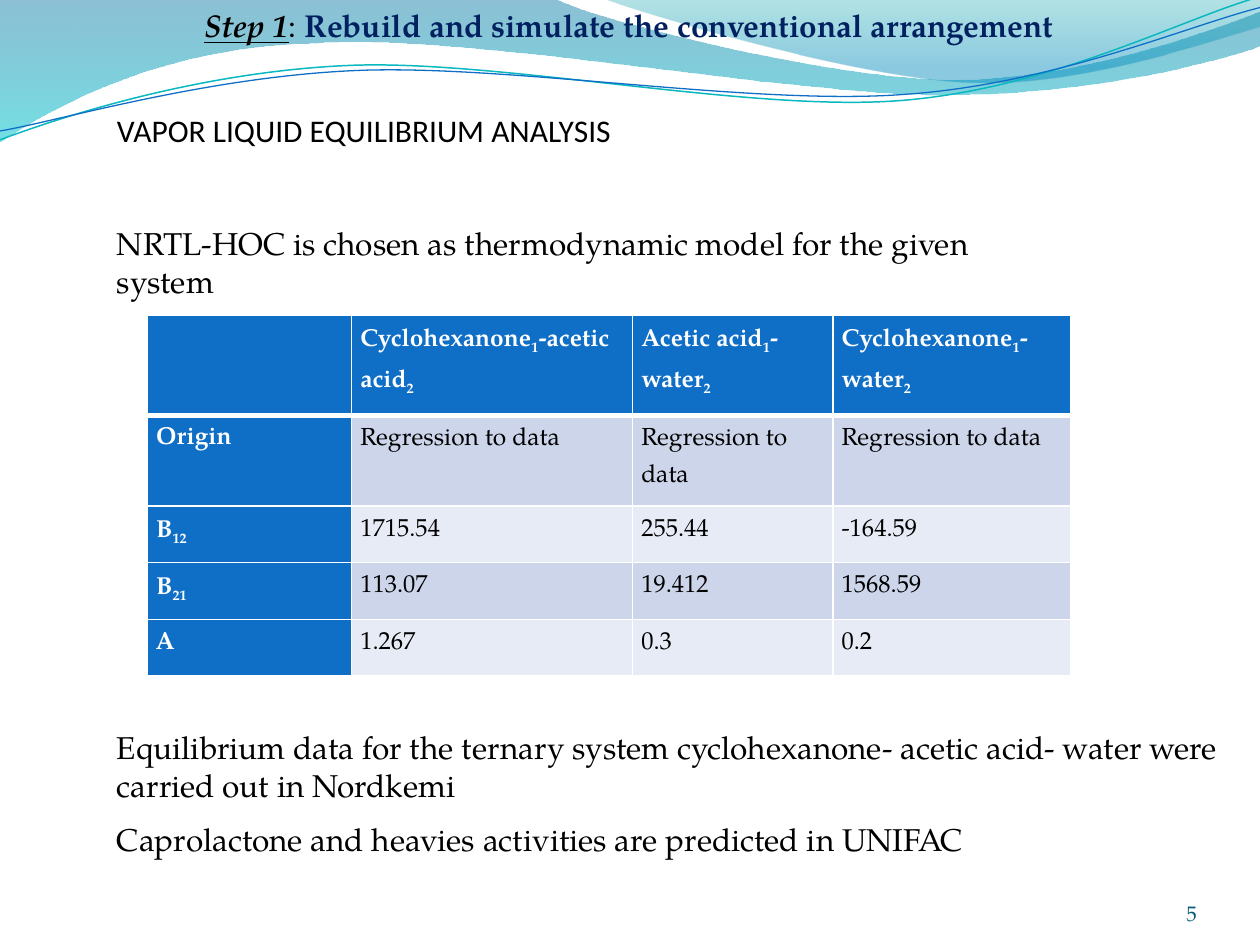
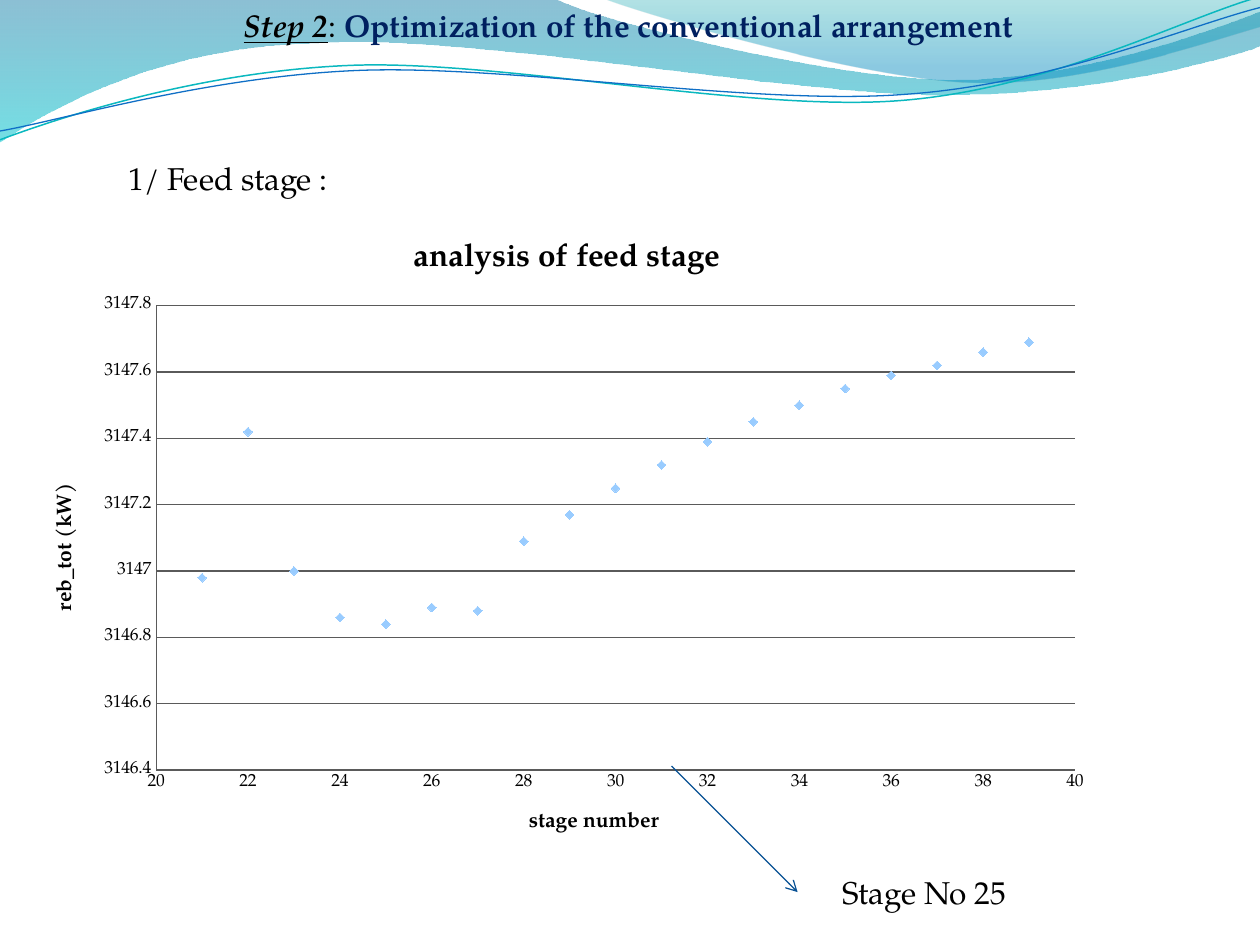
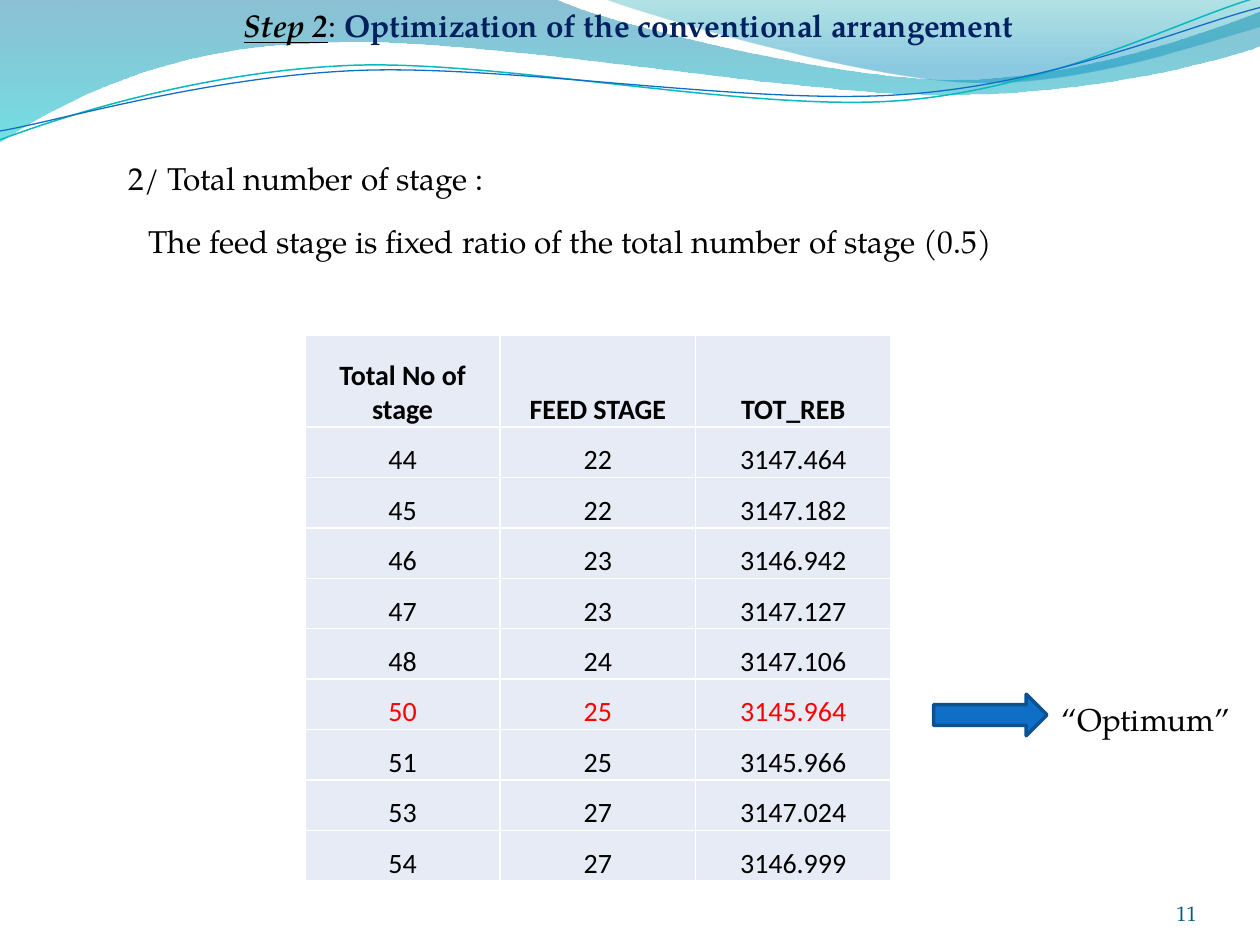
from lxml import etree
from pptx import Presentation, util as u
from pptx.chart.data import XyChartData
from pptx.dml.color import RGBColor
from pptx.enum import chart as ch, shapes, text
from pptx.oxml.ns import qn

SERIF, SANS = "TeX Gyre Pagella", "Calibri"
BLACK, WHITE, RED, NAVY = "000000", "FFFFFF", "FF0000", "002060"
BLUE, DARK_BLUE, TEAL = "0F6FC6", "0B5292", "045D75"
BAND_DARK, BAND_LIGHT, MARKER, GRID = "CCD5EA", "E7EBF5", "99CCFF", "5A5A5A"
CENTER, RIGHT = text.PP_ALIGN.CENTER, text.PP_ALIGN.RIGHT

# Waves: a start point, then straight (one point) or cubic (three points) steps.
# Gradient stops are position, colour, opacity.
BANDS = [
    ([(0, 0), [(4.4, -0.01)], [(4.76, 0.17), (6.64, 0.63), (7.58, 0.63)],
      [(8.53, 0.63), (9.58, 0.26), (10, 0.09)], [(10.01, 0.36)],
      [(9.83, 0.44), (8.7, 0.76), (7.46, 0.75)], [(6.22, 0.75), (3.82, 0.28), (2.57, 0.34)],
      [(1.29, 0.36), (0.46, 0.83), (-0.01, 1.13)]],
     [(0, "0074A1", 45), (1, "00C6CF", 55)]),
    ([(4.79, -0.01), [(5.09, 0.11), (6.82, 0.62), (7.69, 0.65)],
      [(8.56, 0.69), (9.61, 0.32), (10, 0.21)], [(10, 0)]],
     [(0, "00A1A9", 30), (0.8, "008BBF", 45)]),
]
WAVE_LINES = [
    ([(0, 1.11), [(0.48, 0.93), (1.58, 0.57), (2.77, 0.52)],
      [(3.95, 0.47), (5.93, 0.89), (7.13, 0.8)], [(8.33, 0.71), (9.38, 0.15), (9.98, -0.02)]],
     "0AB8BF", 0.85),
    ([(0, 1.04), [(0.47, 0.96), (1.64, 0.61), (2.83, 0.56)],
      [(4.03, 0.51), (5.97, 0.84), (7.17, 0.75)], [(8.36, 0.67), (9.41, 0.21), (10, 0.06)]],
     BLUE, 0.75),
]

# "~" switches subscript on and off.
MODEL_ROWS = [
    ["", "Cyclohexanone~1~-acetic acid~2", "Acetic acid~1~-water~2", "Cyclohexanone~1~-water~2"],
    ["Origin"] + ["Regression to data"] * 3,
    ["B~12", "1715.54", "255.44", "-164.59"],
    ["B~21", "113.07", "19.412", "1568.59"],
    ["Α", "1.267", "0.3", "0.2"],
]
STAGE_ROWS = [
    ["Total No of stage", "FEED STAGE", "TOT_REB"],
    ["44", "22", "3147.464"],
    ["45", "22", "3147.182"],
    ["46", "23", "3146.942"],
    ["47", "23", "3147.127"],
    ["48", "24", "3147.106"],
    ["50", "25", "3145.964"],
    ["51", "25", "3145.966"],
    ["53", "27", "3147.024"],
    ["54", "27", "3146.999"],
]
OPTIMUM_ROW = 6
FIRST_STAGE = 21
REBOILER_DUTY = [3146.98, 3147.42, 3147.0, 3146.86, 3146.84, 3146.89, 3146.88, 3147.09,
                 3147.17, 3147.25, 3147.32, 3147.39, 3147.45, 3147.5, 3147.55, 3147.59,
                 3147.62, 3147.66, 3147.69]


def rgb(color):
    return RGBColor.from_string(color)


def inches(*lengths):
    return [u.Inches(n) for n in lengths]


def style_font(font, size, color=BLACK, name=SERIF, bold=False):
    font.size, font.name, font.bold = u.Pt(size), name, bold
    font.color.rgb = rgb(color)


def add_run(p, words, size=18, color=BLACK, name=SERIF, bold=False):
    r = p.add_run()
    r.text = words
    style_font(r.font, size, color, name, bold)
    return r


def add_text(slide, words, box, size=18, color=BLACK, name=SERIF, align=None):
    tf = slide.shapes.add_textbox(*inches(*box)).text_frame
    tf.word_wrap = True
    p = tf.paragraphs[0]
    p.alignment = align
    add_run(p, words, size, color, name)
    return tf


def add_page_number(slide, number):
    tf = add_text(slide, number, (8.67, 6.95, 0.83, 0.4), 12, TEAL, align=RIGHT)
    tf.margin_left = tf.margin_top = tf.margin_right = tf.margin_bottom = 0
    tf.vertical_anchor = text.MSO_ANCHOR.BOTTOM


def add_step_slide(prs, step, words):
    slide = prs.slides.add_slide(prs.slide_layouts[5])
    title = slide.shapes.title
    title.left, title.top, title.width, title.height = inches(-0.02, 0, 10.02, 0.4)
    tf = title.text_frame
    tf.word_wrap, tf.auto_size = True, text.MSO_AUTO_SIZE.NONE
    tf.vertical_anchor = text.MSO_ANCHOR.TOP
    p = tf.paragraphs[0]
    p.alignment = CENTER
    r = add_run(p, step, bold=True)
    r.font.italic = r.font.underline = True
    add_run(p, ": ")
    add_run(p, words, color=NAVY, bold=True)
    return slide


def bend(sp, steps):
    """Turn the straight segments whose step has three points into cubic curves."""
    segments = list(sp.element.iter(qn("a:lnTo")))
    for segment, step in zip(segments, steps):
        if len(step) == 1:
            continue
        curve = etree.Element(qn("a:cubicBezTo"))
        for x, y in step:
            etree.SubElement(curve, qn("a:pt"), x=str(u.Inches(x) - sp.left),
                             y=str(u.Inches(y) - sp.top))
        segment.getparent().replace(segment, curve)


def add_outline(slide, outline, close):
    start, *steps = outline
    builder = slide.shapes.build_freeform(*inches(*start))
    builder.add_line_segments([inches(*step[-1]) for step in steps], close=close)
    sp = builder.convert_to_shape()
    bend(sp, steps)
    sp.shadow.inherit = False
    return sp


def add_band(slide, outline, stops):
    sp = add_outline(slide, outline, True)
    sp.line.fill.background()
    sp.fill.gradient()
    sp.fill.gradient_angle = 270
    for stop, (position, color, _) in zip(sp.fill.gradient_stops, stops):
        stop.position, stop.color.rgb = position, rgb(color)
    for clr, (_, _, opacity) in zip(sp.element.iter(qn("a:srgbClr")), stops):
        etree.SubElement(clr, qn("a:alpha"), val=str(opacity * 1000))
    return sp


def add_wave_line(slide, outline, color, width):
    sp = add_outline(slide, outline, False)
    sp.fill.background()
    sp.line.color.rgb, sp.line.width = rgb(color), u.Pt(width)
    return sp


def add_waves_to_master(prs, slide):
    """Draw the waves on a slide, then move them to the master for all slides."""
    waves = [add_band(slide, *band) for band in BANDS]
    waves += [add_wave_line(slide, *line) for line in WAVE_LINES]
    for sp in waves:
        prs.slide_master.shapes.element.append(sp.element)


def set_borders(cell, top=1, bottom=1):
    tc_pr = cell._tc.get_or_add_tcPr()
    for i, (side, width) in enumerate((("L", 1), ("R", 1), ("T", top), ("B", bottom))):
        ln = etree.Element(qn(f"a:ln{side}"), w=str(u.Pt(width)))
        fill = etree.SubElement(ln, qn("a:solidFill"))
        etree.SubElement(fill, qn("a:srgbClr"), val=WHITE)
        tc_pr.insert(i, ln)


def add_table(slide, rows, left, top, widths, heights):
    frame = slide.shapes.add_table(len(rows), len(widths),
                                   *inches(left, top, sum(widths), sum(heights)))
    table = frame.table
    table.first_row = table.horz_banding = False
    for column, width in zip(table.columns, widths):
        column.width = u.Inches(width)
    for row, height in zip(table.rows, heights):
        row.height = u.Inches(height)
    return table


def fill_cell(cell, words, fill, margins, **font):
    cell.fill.solid()
    cell.fill.fore_color.rgb = rgb(fill)
    cell.margin_left, cell.margin_top, cell.margin_right, cell.margin_bottom = inches(*margins)
    p = cell.text_frame.paragraphs[0]
    if words:
        for i, part in enumerate(words.split("~")):
            r = add_run(p, part, **font)
            if i % 2:
                r.font._element.set("baseline", "-25000")
    return p


def add_model_table(slide):
    table = add_table(slide, MODEL_ROWS, 1.17, 2.5, [1.62, 2.23, 1.59, 1.89],
                      [0.72] * 2 + [0.45] * 3)
    for i, row in enumerate(MODEL_ROWS):
        for j, words in enumerate(row):
            header = i == 0 or j == 0
            fill = BLUE if header else BAND_DARK if i % 2 else BAND_LIGHT
            cell = table.cell(i, j)
            p = fill_cell(cell, words, fill, (0.07, 0, 0.07, 0), size=14,
                          color=WHITE if header else BLACK, bold=header)
            p.line_spacing = 1.5
            set_borders(cell, top=3 if i == 1 else 1, bottom=3 if i == 0 else 1)


def add_stage_table(slide):
    table = add_table(slide, STAGE_ROWS, 2.42, 2.66, [1.55] * 3, [0.73] + [0.4] * 9)
    for i, row in enumerate(STAGE_ROWS):
        for j, words in enumerate(row):
            cell = table.cell(i, j)
            p = fill_cell(cell, words, BAND_LIGHT, (0.01, 0.01, 0.01, 0), size=16, name=SANS,
                          color=RED if i == OPTIMUM_ROW else BLACK, bold=i == 0)
            p.alignment = CENTER
            cell.vertical_anchor = text.MSO_ANCHOR.BOTTOM
            set_borders(cell)


def style_axis(axis, title, low, high, unit):
    axis.minimum_scale, axis.maximum_scale, axis.major_unit = low, high, unit
    axis.major_tick_mark = axis.minor_tick_mark = ch.XL_TICK_MARK.NONE
    axis.tick_labels.number_format = "General"
    axis.tick_labels.number_format_is_linked = False
    axis.format.line.color.rgb, axis.format.line.width = rgb(GRID), u.Pt(0.75)
    add_run(axis.axis_title.text_frame.paragraphs[0], title, 12, bold=True)


def place_plot(chart, **fractions):
    """Fix the inner plot area, given as fractions of the chart."""
    area = chart._chartSpace.chart.plotArea
    for old in area.findall(qn("c:layout")):
        area.remove(old)
    layout = etree.Element(qn("c:layout"))
    manual = etree.SubElement(layout, qn("c:manualLayout"))
    settings = {"layoutTarget": "inner", "xMode": "edge", "yMode": "edge", **fractions}
    for tag, value in settings.items():
        etree.SubElement(manual, qn(f"c:{tag}"), val=str(value))
    area.insert(0, layout)


def add_feed_stage_chart(slide):
    data = XyChartData()
    points = data.add_series("Series 1")
    for stage, duty in enumerate(REBOILER_DUTY, FIRST_STAGE):
        points.add_data_point(stage, duty)
    chart = slide.shapes.add_chart(ch.XL_CHART_TYPE.XY_SCATTER,
                                   *inches(0.21, 1.71, 8.58, 5.12), data).chart
    style_font(chart.font, 10)
    chart.has_legend = False
    add_run(chart.chart_title.text_frame.paragraphs[0], "analysis of feed stage", bold=True)
    style_axis(chart.category_axis, "stage number", 20, 40, 2)
    style_axis(chart.value_axis, "reb_tot (kW) ", 3146.4, 3147.8, 0.2)
    chart.category_axis.has_major_gridlines = False
    grid = chart.value_axis.major_gridlines.format.line
    grid.color.rgb, grid.width = rgb(GRID), u.Pt(0.75)
    chart.plots[0].vary_by_categories = False
    series = chart.plots[0].series[0]
    series.smooth = False
    series.format.line.fill.background()
    series.marker.style, series.marker.size = ch.XL_MARKER_STYLE.DIAMOND, 5
    series.marker.format.fill.solid()
    series.marker.format.fill.fore_color.rgb = rgb(MARKER)
    series.marker.format.line.fill.background()
    place_plot(chart, x=0.12, y=0.14, w=0.85, h=0.72)


def add_arrow_line(slide, start, end):
    line = slide.shapes.add_connector(shapes.MSO_CONNECTOR.STRAIGHT, *inches(*start, *end))
    line.line.color.rgb, line.line.width = rgb("095295"), u.Pt(0.75)
    etree.SubElement(line.line._get_or_add_ln(), qn("a:tailEnd"), type="arrow")
    etree.SubElement(line.element.spPr, qn("a:effectLst"))


def add_block_arrow(slide, box):
    sp = slide.shapes.add_shape(shapes.MSO_SHAPE.RIGHT_ARROW, *inches(*box))
    sp.shadow.inherit = False
    sp.fill.solid()
    sp.fill.fore_color.rgb = rgb(BLUE)
    sp.line.color.rgb, sp.line.width = rgb(DARK_BLUE), u.Pt(2)


def build_model_slide(prs):
    slide = add_step_slide(prs, "Step 1", "Rebuild and simulate the conventional arrangement")
    add_waves_to_master(prs, slide)
    add_text(slide, "VAPOR LIQUID EQUILIBRIUM ANALYSIS", (0.83, 0.83, 6.67, 0.71), name=SANS)
    add_text(slide, "NRTL-HOC is chosen as thermodynamic model for the given system",
             (0.83, 1.73, 7.61, 0.4))
    add_model_table(slide)
    add_text(slide, "Equilibrium data for the ternary system cyclohexanone- acetic acid- water "
             "were carried out in Nordkemi", (0.83, 5.73, 9.42, 0.71))
    add_text(slide, "Caprolactone and heavies activities are predicted in UNIFAC",
             (0.83, 6.46, 9.17, 0.71))
    add_page_number(slide, "5")


def build_optimization_slide(prs, heading):
    slide = add_step_slide(prs, "Step 2", "Optimization of the conventional arrangement")
    add_text(slide, heading, (0.92, 1.21, 3.58, 1.01))
    return slide


def build_feed_stage_slide(prs):
    slide = build_optimization_slide(prs, "1/ Feed stage :")
    add_feed_stage_chart(slide)
    add_arrow_line(slide, (5.33, 6.08), (6.33, 7.08))
    add_text(slide, "Stage No 25", (6.59, 6.88, 2, 0.4))


def build_total_stage_slide(prs):
    slide = build_optimization_slide(prs, "2/ Total number of stage :")
    add_text(slide, "The feed stage is fixed ratio of the total number of stage (0.5)",
             (1.08, 1.71, 7.75, 0.4))
    add_stage_table(slide)
    add_block_arrow(slide, (7.41, 5.51, 0.9, 0.33))
    add_text(slide, "“Optimum”", (8.33, 5.51, 2.5, 0.4))
    add_page_number(slide, "11")


def main():
    prs = Presentation()
    prs.slide_width, prs.slide_height = inches(10, 7.5)
    build_model_slide(prs)
    build_feed_stage_slide(prs)
    build_total_stage_slide(prs)
    prs.save("out.pptx")


if __name__ == "__main__":
    main()
